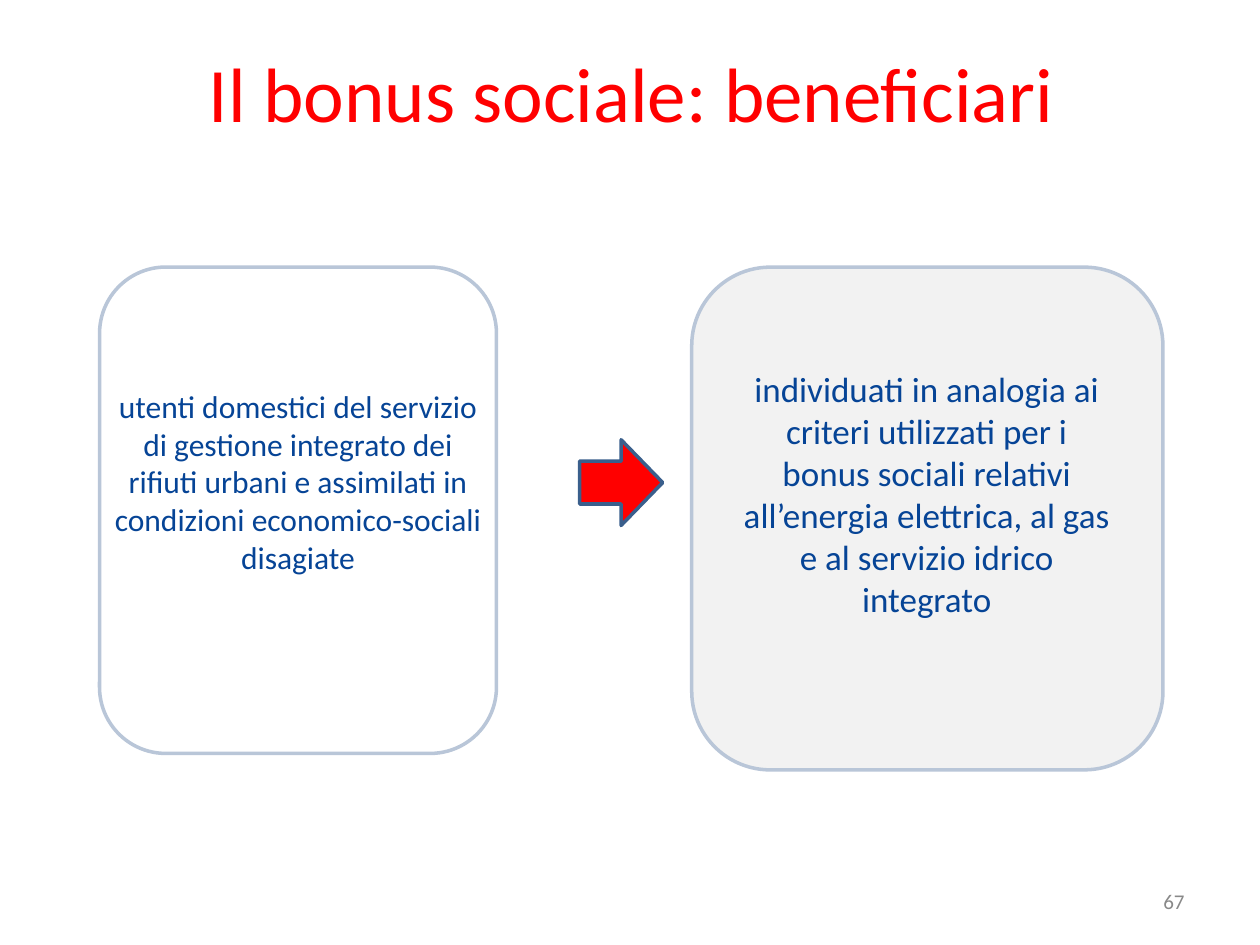
from pptx import Presentation
from pptx.dml.color import RGBColor
from pptx.enum.shapes import MSO_SHAPE
from pptx.enum.text import MSO_ANCHOR, PP_ALIGN
from pptx.util import Inches, Pt

ROUNDED = MSO_SHAPE.ROUNDED_RECTANGLE
ARROW = MSO_SHAPE.RIGHT_ARROW
TOP, MIDDLE = MSO_ANCHOR.TOP, MSO_ANCHOR.MIDDLE
CENTER, RIGHT = PP_ALIGN.CENTER, PP_ALIGN.RIGHT

FONT = "Calibri"
COLORS = {
    "red": "FF0000",
    "text": "064496",
    "panel": "F2F2F2",
    "panel_line": "B9C6D8",
    "arrow_line": "3A5F8C",
    "number": "898989",
}


def color(name):
    return RGBColor.from_string(COLORS[name])


def write(tf, text, size=18, fill="text", align=CENTER, anchor=TOP):
    tf.word_wrap = True
    tf.vertical_anchor = anchor
    p = tf.paragraphs[0]
    p.alignment = align
    r = p.add_run()
    r.text = text
    r.font.name = FONT
    r.font.size = Pt(size)
    r.font.color.rgb = color(fill)


def add_title(s, text, x, y, w, h):
    sp = s.shapes.title
    sp.left, sp.top, sp.width, sp.height = map(Inches, (x, y, w, h))
    write(sp.text_frame, text, size=44, fill="red", anchor=MIDDLE)


def add_shape(s, kind, x, y, w, h, line, fill=None):
    sp = s.shapes.add_shape(kind, *map(Inches, (x, y, w, h)))
    sp.shadow.inherit = False
    if fill:
        sp.fill.solid()
        sp.fill.fore_color.rgb = color(fill)
    else:
        sp.fill.background()
    sp.line.color.rgb = color(line)
    sp.line.width = Pt(2)


def add_text(s, text, x, y, w, h, inset_top=0.05, **fmt):
    tf = s.shapes.add_textbox(*map(Inches, (x, y, w, h))).text_frame
    tf.margin_top = Inches(inset_top)
    write(tf, text, **fmt)


def main():
    prs = Presentation()
    prs.slide_width, prs.slide_height = Inches(10), Inches(7.5)
    s = prs.slides.add_slide(prs.slide_layouts[5])

    add_title(s, "Il bonus sociale: beneficiari", 0.5, 0.21, 9.03, 1.04)

    # Left panel: who benefits
    add_shape(s, ROUNDED, 0.79, 2.12, 3.15, 3.86, line="panel_line")
    add_text(s, "utenti domestici del servizio di gestione integrato dei "
             "rifiuti urbani e assimilati in condizioni economico-sociali "
             "disagiate", 0.79, 2.72, 3.15, 2.22, inset_top=0.35)

    # Arrow between the panels
    add_shape(s, ARROW, 4.6, 3.49, 0.66, 0.68, line="arrow_line", fill="red")

    # Right panel: how they are identified
    add_shape(s, ROUNDED, 5.49, 2.12, 3.74, 3.99, line="panel_line", fill="panel")
    add_text(s, "individuati in analogia ai criteri utilizzati per i bonus "
             "sociali relativi all’energia elettrica, al gas e al servizio "
             "idrico integrato", 5.78, 2.87, 3.15, 2.12, size=20)

    # Slide number
    add_text(s, "67", 7.17, 6.95, 2.33, 0.4, size=12, fill="number",
             align=RIGHT, anchor=MIDDLE)

    prs.save("out.pptx")


if __name__ == "__main__":
    main()
